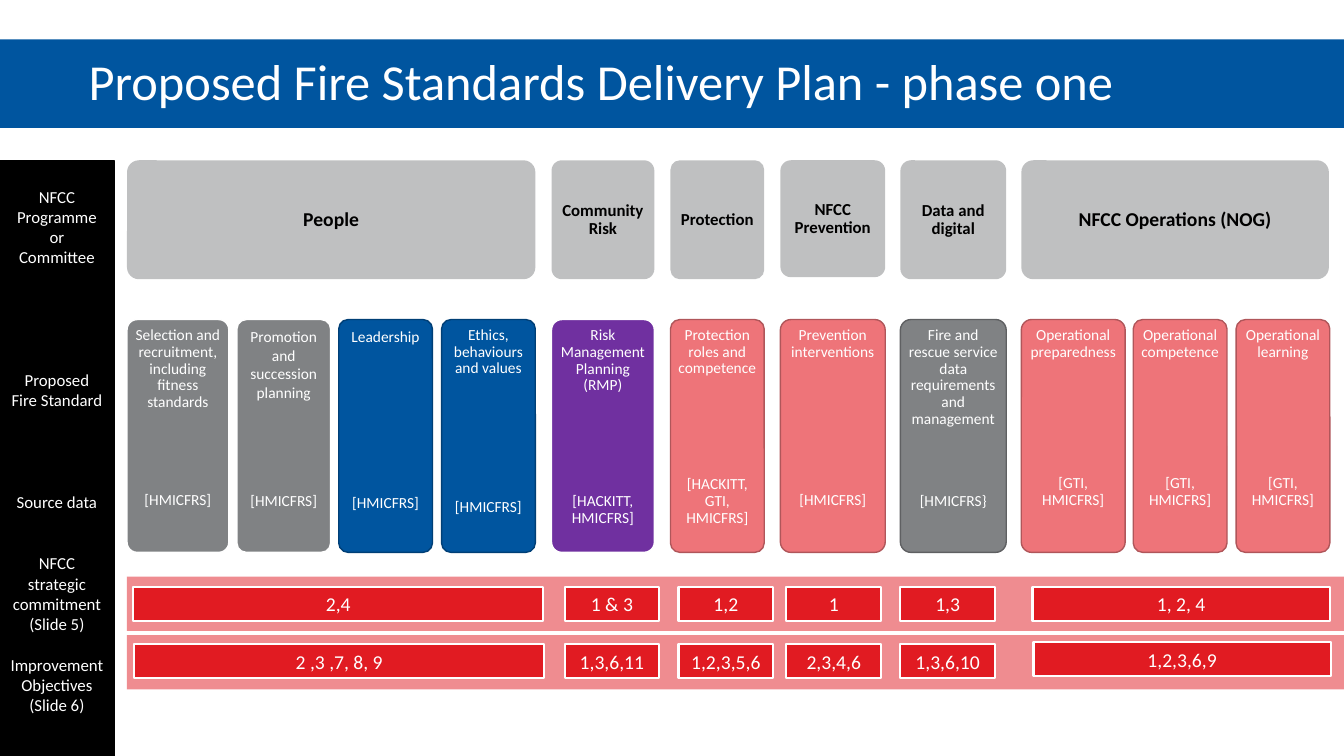
"""Build the slide of the fire standards delivery plan, phase one."""

from dataclasses import dataclass

from lxml.etree import SubElement
from pptx import Presentation
from pptx.dml.color import RGBColor as RGB
from pptx.enum.shapes import MSO_SHAPE as Kind
from pptx.enum.text import MSO_ANCHOR as Anchor, PP_ALIGN as Align
from pptx.oxml.ns import qn
from pptx.shapes.autoshape import Shape
from pptx.slide import Slide
from pptx.util import Emu, Pt

SCALE = 9144
FONT = "Calibri"
WHITE = RGB(0xFF, 0xFF, 0xFF)
BLACK = RGB(0x00, 0x00, 0x00)
RED = RGB(0xE1, 0x1B, 0x22)
BLUE = RGB(0x00, 0x55, 0x9F)
NAVY = RGB(0x00, 0x3F, 0x76)
GREY = RGB(0x80, 0x82, 0x84)
SLATE = RGB(0x5F, 0x60, 0x62)
PURPLE = RGB(0x70, 0x30, 0xA0)
PINK = RGB(0xEE, 0x74, 0x79)
ROSE = RGB(0xB0, 0x56, 0x5A)


@dataclass(frozen=True)
class Box:
    """Place of a shape in px."""

    left: int
    top: int
    width: int
    height: int


@dataclass(frozen=True)
class Line:
    """One paragraph, with the gap above it and its line spacing."""

    text: str
    size: int
    gap: float = 0
    pitch: float = 1.0


@dataclass(frozen=True)
class Head:
    """A programme heading."""

    left: int
    width: int
    text: str
    size: int = 12
    height: int = 118


@dataclass(frozen=True)
class Card:
    """A proposed standard, with its source data a gap in points below."""

    left: int
    width: int
    name: str
    source: str
    gap: float
    fill: RGB
    edge: RGB
    pitch: float = 0.9
    inset: int = 5


@dataclass(frozen=True)
class Slot:
    """A column of two red bars, the lower one shifted by dx and dy."""

    left: int
    width: int
    upper: str
    lower: str
    dx: int = 0
    dy: int = 0


HEADS = [
    Head(126, 405, "People", 14),
    Head(547, 102, "Community Risk"),
    Head(665, 93, "Protection"),
    Head(774, 104, "NFCC Prevention", height=116),
    Head(893, 105, "Data and digital"),
    Head(1013, 305, "NFCC Operations (NOG)", 14),
]
CARDS = [
    Card(126, 101, "Selection and recruitment, including fitness standards",
         "[HMICFRS]", 58, GREY, WHITE),
    Card(235, 93, "Promotion and succession planning", "[HMICFRS]", 64.5, GREY, WHITE, 1.0),
    Card(336, 93, "Leadership", "[HMICFRS]", 105, BLUE, NAVY, 1.0),
    Card(438, 93, "Ethics, behaviours and values", "[HMICFRS]", 87, BLUE, NAVY, inset=4),
    Card(547, 102, "Risk Management Planning (RMP)", "[HACKITT, HMICFRS]", 71, PURPLE, WHITE),
    Card(665, 93, "Protection roles and competence", "[HACKITT, GTI, HMICFRS]",
         71, PINK, ROSE),
    Card(774, 104, "Prevention interventions", "[HMICFRS]", 94, PINK, ROSE),
    Card(893, 105, "Fire and rescue service data requirements and management",
         "[HMICFRS}", 47, GREY, SLATE),
    Card(1013, 103, "Operational preparedness", "[GTI, HMICFRS]", 82, PINK, ROSE),
    Card(1124, 93, "Operational competence", "[GTI, HMICFRS]", 82, PINK, ROSE),
    Card(1226, 93, "Operational learning", "[GTI, HMICFRS]", 82, PINK, ROSE),
]
SLOTS = [
    Slot(132, 407, "2,4", "2 ,3 ,7, 8, 9", dx=1),
    Slot(560, 94, "1 & 3", "1,3,6,11"),
    Slot(673, 94, "1,2", "1,2,3,5,6"),
    Slot(780, 94, "1", "2,3,4,6"),
    Slot(893, 94, "1,3", "1,3,6,10"),
    Slot(1024, 295, "1, 2, 4", "1,2,3,6,9", dx=1, dy=-2),
]
ROW = 14.65
LABELS = [
    Line("NFCC Programme\nor Committee", 12),
    Line("Proposed\nFire Standard", 12, 5 * ROW),
    Line("Source data", 12, 4 * ROW),
    Line("NFCC strategic commitment", 12, 2 * ROW),
    Line("(Slide 5)", 12),
    Line("Improvement Objectives", 12, ROW),
    Line("(Slide 6)", 12),
]


def px(count: int) -> Emu:
    """Turn px into EMU."""
    return Emu(count * SCALE)


def draw(slide: Slide, box: Box, fill: RGB, edge: RGB | None = None,
         weight: float = 1, clear: bool = False, rounded: bool = False) -> Shape:
    """Add a filled rectangle, half clear or with round corners if asked."""
    kind = Kind.ROUNDED_RECTANGLE if rounded else Kind.RECTANGLE
    shape = slide.shapes.add_shape(
        kind, px(box.left), px(box.top), px(box.width), px(box.height))
    shape.shadow.inherit = False
    if rounded:
        shape.adjustments[0] = 0.1
    shape.fill.solid()
    shape.fill.fore_color.rgb = fill
    if clear:
        tint = shape.element.spPr.find(qn("a:solidFill")).find(qn("a:srgbClr"))
        SubElement(tint, qn("a:alpha"), val="50000")
    if edge is None:
        shape.line.fill.background()
    else:
        shape.line.color.rgb = edge
        shape.line.width = Pt(weight)
    return shape


def write(shape: Shape, lines: list[Line], color: RGB = WHITE, bold: bool = False,
          inset: int = 5, anchor: Anchor = Anchor.MIDDLE, align: Align = Align.CENTER) -> None:
    """Fill a shape with paragraphs."""
    frame = shape.text_frame
    frame.word_wrap = True
    frame.vertical_anchor = anchor
    frame.margin_left = frame.margin_right = px(inset)
    frame.margin_top = frame.margin_bottom = px(5)
    for rank, line in enumerate(lines):
        para = frame.add_paragraph() if rank else frame.paragraphs[0]
        para.text = line.text
        para.alignment = align
        para.line_spacing = line.pitch
        if line.gap:
            para.space_before = Pt(line.gap)
        para.font.name = FONT
        para.font.size = Pt(line.size)
        para.font.bold = bold
        para.font.color.rgb = color


def main() -> None:
    """Draw the slide and save it."""
    deck = Presentation()
    deck.slide_width, deck.slide_height = px(1333), px(750)
    slide = deck.slides.add_slide(deck.slide_layouts[6])
    for top in (630, 572):
        draw(slide, Box(126, top, 1207, 54), RED, clear=True)
    title = draw(slide, Box(0, 39, 1333, 88), BLUE)
    write(title, [Line("Proposed Fire Standards Delivery Plan - phase one", 36, pitch=0.9)],
          inset=88, align=Align.LEFT)
    for head in HEADS:
        shape = draw(slide, Box(head.left, 159, head.width, head.height), GREY,
                     clear=True, rounded=True)
        write(shape, [Line(head.text, head.size, pitch=0.9)], BLACK, bold=True)
    for card in CARDS:
        shape = draw(slide, Box(card.left, 317, card.width, 231), card.fill, card.edge,
                     rounded=True)
        write(shape, [Line(card.name, 11, pitch=card.pitch),
                      Line(card.source, 11, card.gap, card.pitch)],
              inset=card.inset, anchor=Anchor.TOP)
    side = draw(slide, Box(0, 159, 113, 591), BLACK, BLACK)
    write(side, LABELS, inset=10, anchor=Anchor.TOP)
    side.text_frame.margin_top = px(26)
    for slot in SLOTS:
        for left, top, text in ((slot.left, 582, slot.upper),
                                (slot.left + slot.dx, 639 + slot.dy, slot.lower)):
            bar = draw(slide, Box(left, top, slot.width, 34), RED, WHITE, 1.5)
            write(bar, [Line(text, 14)])
    deck.save("out.pptx")


if __name__ == "__main__":
    main()
